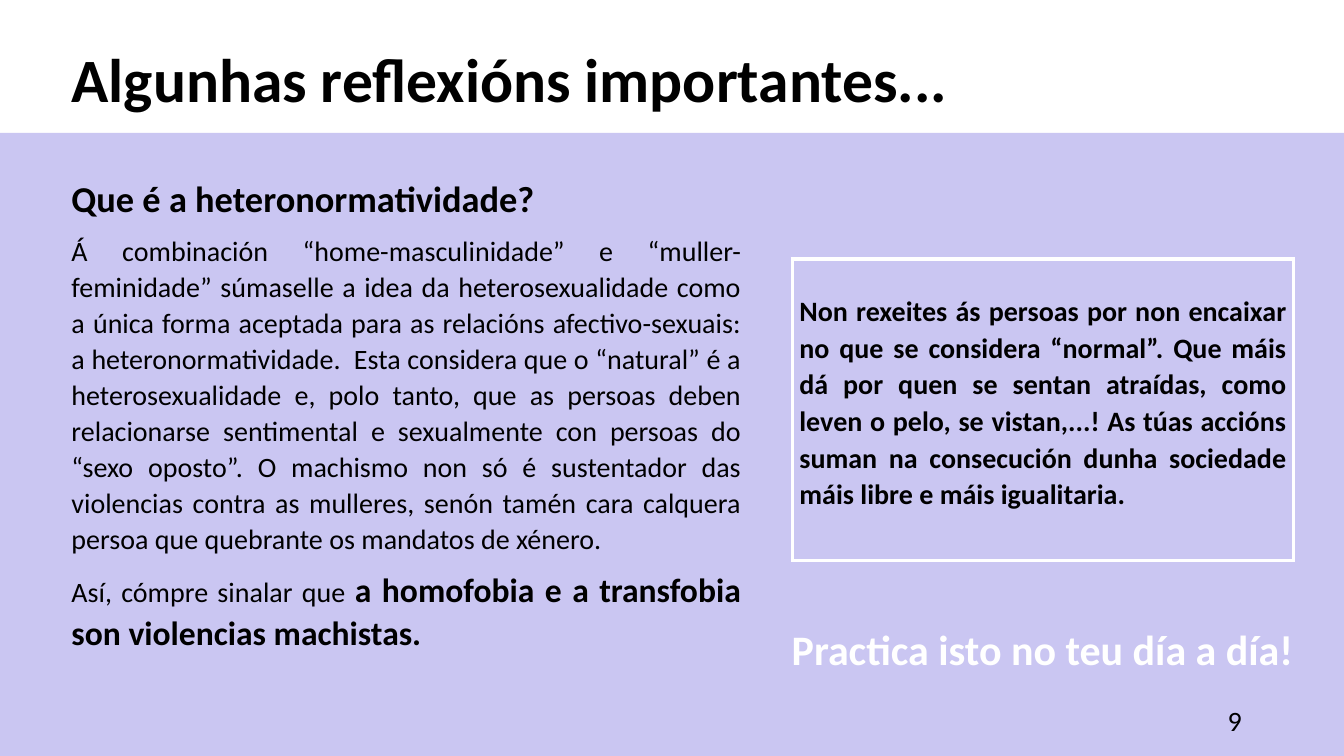
"""Build the slide on heteronormativity with a framed call to action."""

from dataclasses import dataclass

from lxml.etree import SubElement
from pptx import Presentation
from pptx.dml.color import RGBColor
from pptx.enum.shapes import MSO_SHAPE
from pptx.enum.text import MSO_ANCHOR, PP_ALIGN
from pptx.oxml.ns import qn
from pptx.slide import Slide
from pptx.table import _Cell
from pptx.text.text import Font, TextFrame, _Paragraph
from pptx.util import Pt


@dataclass(frozen=True)
class Theme:
    """Colours, font and type sizes of the slide."""

    black: str = "000000"
    white: str = "FFFFFF"
    lilac: str = "CAC6F2"
    font: str = "Calibri"
    title: float = 44
    slogan: float = 30
    heading: float = 26
    emphasis: float = 24
    body: float = 20
    border: float = 3


THEME = Theme()


@dataclass(frozen=True)
class Span:
    """Text in one size and weight."""

    text: str
    size: float = THEME.body
    bold: bool = False


@dataclass(frozen=True)
class Passage:
    """A paragraph made of one or more spans."""

    spans: tuple[Span, ...]
    alignment: PP_ALIGN = PP_ALIGN.LEFT
    color: str = THEME.black
    line_spacing: float = 1.07
    space_after: float = 8


@dataclass(frozen=True)
class TextArea:
    """A text box given in points."""

    left: float
    top: float
    width: float
    height: float
    passages: tuple[Passage, ...]
    anchor: MSO_ANCHOR = MSO_ANCHOR.TOP
    right_inset: float = 7.2


TEXT_AREAS = (
    TextArea(44, 22.3, 836, 62, (
        Passage((Span("Algunhas reflexións importantes...", THEME.title, True),)),
    )),
    TextArea(44, 120.2, 492.5, 351.4, (
        Passage((Span("Que é a heteronormatividade?", THEME.heading, True),)),
        Passage((Span(
            "Á combinación “home-masculinidade” e “muller-feminidade” súmaselle a idea da "
            "heterosexualidade como a única forma aceptada para as relacións afectivo-sexuais: "
            "a heteronormatividade.  Esta considera que o “natural” é a heterosexualidade e, "
            "polo tanto, que as persoas deben relacionarse sentimental e sexualmente con persoas "
            "do “sexo oposto”. O machismo non só é sustentador das violencias contra as mulleres, "
            "senón tamén cara calquera persoa que quebrante os mandatos de xénero."
        ),), PP_ALIGN.JUSTIFY),
        Passage((
            Span("Así, cómpre sinalar que "),
            Span("a homofobia e a transfobia son violencias machistas.", THEME.emphasis, True),
        ), PP_ALIGN.JUSTIFY),
    )),
    TextArea(547.2, 439.2, 402.5, 44.6, (
        Passage((Span("Practica isto no teu día a día!", THEME.slogan, True),),
                PP_ALIGN.CENTER, THEME.white),
    ), right_inset=14.4),
    TextArea(678.2, 500.4, 216, 28.8, (
        Passage((Span("9"),), PP_ALIGN.RIGHT, line_spacing=1, space_after=0),
    ), MSO_ANCHOR.MIDDLE),
)

ADVICE = Passage((Span(
    "Non rexeites ás persoas por non encaixar no que se considera “normal”. Que máis dá por "
    "quen se sentan atraídas, como leven o pelo, se vistan,...! As túas accións suman na "
    "consecución dunha sociedade máis libre e máis igualitaria.", bold=True,
),), PP_ALIGN.JUSTIFY)


def style_font(font: Font, span: Span, color: str) -> None:
    """Apply the theme font with the size, weight and colour wanted."""
    font.name = THEME.font
    font.size = Pt(span.size)
    font.bold = span.bold
    font.color.rgb = RGBColor.from_string(color)


def write_passage(paragraph: _Paragraph, passage: Passage) -> None:
    """Fill a paragraph with its spans."""
    paragraph.alignment = passage.alignment
    paragraph.line_spacing = passage.line_spacing
    paragraph.space_after = Pt(passage.space_after)
    for span in passage.spans:
        run = paragraph.add_run()
        run.text = span.text
        if len(passage.spans) > 1:
            style_font(run.font, span, passage.color)
    if len(passage.spans) == 1:
        style_font(paragraph.font, passage.spans[0], passage.color)


def write_passages(frame: TextFrame, passages: tuple[Passage, ...]) -> None:
    """Write passages one after another in a text frame."""
    for index, passage in enumerate(passages):
        paragraph = frame.add_paragraph() if index else frame.paragraphs[0]
        write_passage(paragraph, passage)


def add_text_area(slide: Slide, area: TextArea) -> None:
    """Add a wrapping text box."""
    box = slide.shapes.add_textbox(
        Pt(area.left), Pt(area.top), Pt(area.width), Pt(area.height))
    frame = box.text_frame
    frame.word_wrap = True
    frame.vertical_anchor = area.anchor
    frame.margin_right = Pt(area.right_inset)
    write_passages(frame, area.passages)


def add_panel(slide: Slide) -> None:
    """Add the lilac panel below the title."""
    panel = slide.shapes.add_shape(MSO_SHAPE.RECTANGLE, Pt(0), Pt(95), Pt(960), Pt(445))
    panel.shadow.inherit = False
    panel.fill.solid()
    panel.fill.fore_color.rgb = RGBColor.from_string(THEME.lilac)
    panel.line.fill.background()


def draw_borders(cell: _Cell) -> None:
    """Outline a cell on all four sides, ahead of its fill."""
    properties = cell._tc.get_or_add_tcPr()
    for side in ("lnL", "lnR", "lnT", "lnB"):
        line = SubElement(properties, qn(f"a:{side}"), w=str(Pt(THEME.border)))
        fill = SubElement(line, qn("a:solidFill"))
        SubElement(fill, qn("a:srgbClr"), val=THEME.white)


def add_advice(slide: Slide) -> None:
    """Add the framed advice as a single-cell table."""
    table = slide.shapes.add_table(1, 1, Pt(566), Pt(185), Pt(358), Pt(215.3)).table
    table.first_row = False
    table.horz_banding = False
    cell = table.cell(0, 0)
    cell.margin_left = cell.margin_right = Pt(5)
    cell.margin_top, cell.margin_bottom = Pt(24), Pt(0)
    draw_borders(cell)
    cell.fill.background()
    write_passages(cell.text_frame, (ADVICE,))


def main() -> None:
    """Build and save the presentation."""
    presentation = Presentation()
    presentation.slide_width, presentation.slide_height = Pt(960), Pt(540)
    slide = presentation.slides.add_slide(presentation.slide_layouts[6])
    add_panel(slide)
    for area in TEXT_AREAS:
        add_text_area(slide, area)
    add_advice(slide)
    presentation.save("out.pptx")


if __name__ == "__main__":
    main()
